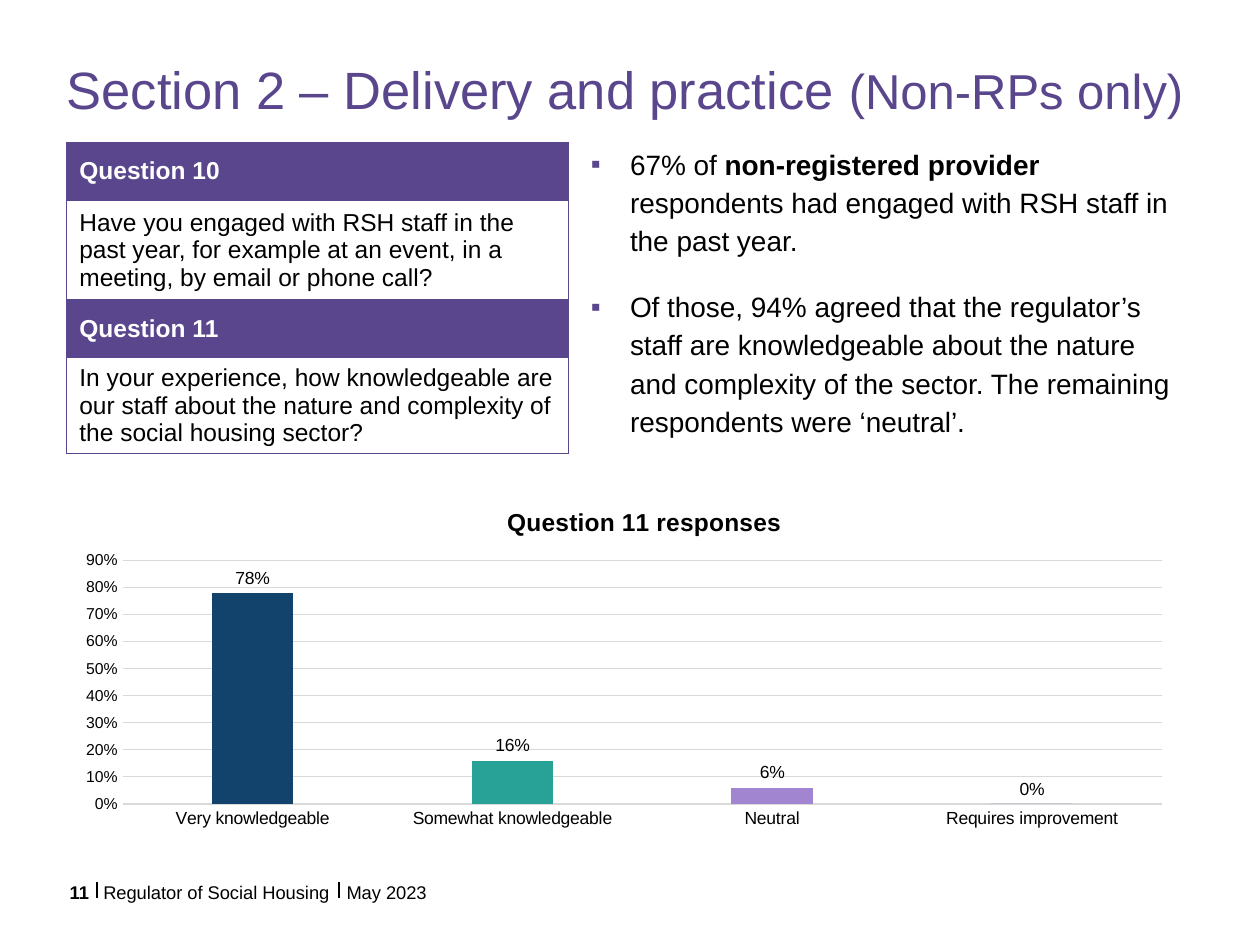
from lxml.etree import SubElement
from pptx import Presentation
from pptx.chart.data import CategoryChartData
from pptx.dml.color import RGBColor
from pptx.enum.chart import XL_CHART_TYPE, XL_LABEL_POSITION, XL_TICK_MARK
from pptx.enum.shapes import MSO_CONNECTOR
from pptx.enum.text import MSO_ANCHOR, MSO_AUTO_SIZE, PP_ALIGN
from pptx.oxml import parse_xml
from pptx.oxml.ns import nsdecls, qn
from pptx.util import Inches, Pt

COLORS = {
    "purple": "59468D", "black": "000000", "white": "FFFFFF", "grid": "D9D9D9",
    "navy": "12436D", "teal": "28A197", "lilac": "A285D1",
}
COLS, ROWS = 100, 75
LEFT, WIDTH, TOP = 5.3, 88.7, 11.3


def rgb(name):
    return RGBColor.from_string(COLORS[name])


class Deck:
    font = "Arial"

    def __init__(self):
        self.prs = Presentation()
        self.prs.slide_width, self.prs.slide_height = Inches(10), Inches(7.5)
        self.s = self.prs.slides.add_slide(self.prs.slide_layouts[1])

    def x(self, col):
        return round(self.prs.slide_width * col / COLS)

    def y(self, row):
        return round(self.prs.slide_height * row / ROWS)

    def box(self, col, row, cols, rows):
        return self.x(col), self.y(row), self.x(cols), self.y(rows)

    def style(self, font, size, color="black", bold=False):
        font.name, font.size, font.bold = self.font, Pt(size), bold
        font.color.rgb = rgb(color)

    def run(self, p, text, size, color="black", bold=False):
        r = p.add_run()
        r.text = text
        self.style(r.font, size, color, bold)

    def frame(self, sp):
        tf = sp.text_frame
        tf.margin_left = tf.margin_right = tf.margin_top = tf.margin_bottom = 0
        tf.word_wrap, tf.auto_size = True, MSO_AUTO_SIZE.NONE
        tf.vertical_anchor = MSO_ANCHOR.TOP
        return tf

    def placeholder(self, sp, *place):
        sp.left, sp.top, sp.width, sp.height = self.box(*place)
        return self.frame(sp)

    def title(self, parts, *place):
        p = self.placeholder(self.s.shapes.title, *place).paragraphs[0]
        p.alignment, p.line_spacing = PP_ALIGN.LEFT, 0.9
        for text, size in parts:
            self.run(p, text, size, "purple")

    def bullets(self, items, *place):
        tf = self.placeholder(self.s.placeholders[1], *place)
        for i, parts in enumerate(items):
            p = tf.add_paragraph() if i else tf.paragraphs[0]
            p.line_spacing, p.space_before, p.space_after = 1.14, Pt(0), Pt(16)
            pPr = p._p.get_or_add_pPr()
            pPr.set("marL", str(self.x(3.1)))
            pPr.set("indent", str(-self.x(3.1)))
            color = SubElement(pPr, qn("a:buClr"))
            SubElement(color, qn("a:srgbClr"), val=COLORS["purple"])
            SubElement(pPr, qn("a:buFont"), typeface=self.font)
            SubElement(pPr, qn("a:buChar"), char="▪")
            for text, bold in parts:
                self.run(p, text, 16, bold=bold)

    def text(self, text, *place, bold=False, align=PP_ALIGN.LEFT):
        p = self.frame(self.s.shapes.add_textbox(*self.box(*place))).paragraphs[0]
        p.alignment = align
        self.run(p, text, 10.5, bold=bold)

    def divider(self, col, top, bottom):
        line = self.s.shapes.add_connector(
            MSO_CONNECTOR.STRAIGHT, self.x(col), self.y(bottom), self.x(col), self.y(top))
        line.line.color.rgb, line.line.width = rgb("black"), Pt(0.75)
        SubElement(line._element.spPr, qn("a:effectLst"))

    def border(self, cell, sides):
        tcPr = cell._tc.get_or_add_tcPr()
        for i, side in enumerate(sides):
            tcPr.insert(i, parse_xml(
                f'<a:ln{side} {nsdecls("a")} w="{Pt(0.5)}"><a:solidFill>'
                f'<a:srgbClr val="{COLORS["purple"]}"/></a:solidFill></a:ln{side}>'))

    def table(self, questions, heights, *place):
        texts = [text for pair in questions for text in pair]
        table = self.s.shapes.add_table(len(texts), 1, *self.box(*place)).table
        table.first_row = table.horz_banding = False
        for i, (text, height) in enumerate(zip(texts, heights)):
            heading = i % 2 == 0
            table.rows[i].height = self.y(height)
            cell = table.cell(i, 0)
            cell.vertical_anchor = MSO_ANCHOR.MIDDLE
            cell.fill.solid()
            cell.fill.fore_color.rgb = rgb("purple" if heading else "white")
            self.border(cell, "LRTB")
            self.run(cell.text_frame.paragraphs[0], text, 14,
                     "white" if heading else "black", heading)

    def layout(self, parent, **shares):
        layout = parent.find(qn("c:layout"))
        if layout is None:
            layout = parse_xml(f'<c:layout {nsdecls("c")}/>')
            parent.insert(0, layout)
        manual = SubElement(layout, qn("c:manualLayout"))
        if "w" in shares:
            SubElement(manual, qn("c:layoutTarget"), val="inner")
        for key in "xy":
            SubElement(manual, qn(f"c:{key}Mode"), val="edge")
        for key, share in shares.items():
            SubElement(manual, qn(f"c:{key}"), val=str(share))

    def chart(self, title, values, fills, *place):
        data = CategoryChartData(number_format="0%")
        data.categories = list(values)
        data.add_series("Series 1", list(values.values()))
        chart = self.s.shapes.add_chart(
            XL_CHART_TYPE.COLUMN_CLUSTERED, *self.box(*place), data).chart
        self.style(chart.font, 10)
        chart.has_legend = False
        chart.has_title = True
        self.run(chart.chart_title.text_frame.paragraphs[0], title, 14, bold=True)
        self.layout(chart.chart_title._element, x=0.39, y=0.04)
        self.layout(chart._chartSpace.chart.plotArea, x=0.05, y=0.21, w=0.93, h=0.7)

        cat, val = chart.category_axis, chart.value_axis
        for axis, size in ((cat, 10), (val, 9)):
            axis.major_tick_mark = axis.minor_tick_mark = XL_TICK_MARK.NONE
            self.style(axis.tick_labels.font, size)
        val.minimum_scale, val.maximum_scale, val.major_unit = 0, 0.9, 0.1
        val.tick_labels.number_format = "0%"
        val.tick_labels.number_format_is_linked = False
        val.format.line.fill.background()
        for line in (cat.format.line, val.major_gridlines.format.line):
            line.color.rgb, line.width = rgb("grid"), Pt(0.75)

        plot = chart.plots[0]
        plot.gap_width, plot.overlap, plot.vary_by_categories = 219, -27, False
        series = plot.series[0]
        series.format.fill.solid()
        series.format.fill.fore_color.rgb = rgb("purple")
        for i, color in enumerate(fills):
            fill = series.points[i].format.fill
            fill.solid()
            fill.fore_color.rgb = rgb(color)
        labels = series.data_labels
        labels.show_value, labels.position = True, XL_LABEL_POSITION.OUTSIDE_END
        labels.number_format, labels.number_format_is_linked = "0%", False
        self.style(labels.font, 10)


def main():
    deck = Deck()
    deck.title([("Section 2 – Delivery and practice ", 30), ("(Non-RPs only)", 28)],
               LEFT, 5.1, WIDTH, 7.9)
    deck.bullets([
        [("67% of ", False), ("non-registered provider ", True),
         ("respondents had engaged with RSH staff in the past year.", False)],
        [("Of those, 94% agreed that the regulator’s staff are knowledgeable about the nature "
          "and complexity of the sector. The remaining respondents were ‘neutral’.", False)],
    ], 46.9, TOP, 47.1, 24.2)
    deck.table([
        ("Question 10", "Have you engaged with RSH staff in the past year, for example at an "
                        "event, in a meeting, by email or phone call?"),
        ("Question 11", "In your experience, how knowledgeable are our staff about the nature "
                        "and complexity of the social housing sector?"),
    ], (4.6, 7.9, 4.6, 7.6), LEFT, TOP, 39.8, 24.7)
    deck.chart("Question 11 responses",
               {"Very knowledgeable": 0.78, "Somewhat knowledgeable": 0.16,
                "Neutral": 0.06, "Requires improvement": 0},
               ("navy", "teal", "lilac"), LEFT, 38.7, WIDTH, 27.6)
    deck.text("11", LEFT, 69.9, 2, 1.2, bold=True, align=PP_ALIGN.CENTER)
    deck.text("Regulator of Social Housing", 8.2, 69.9, 18.3, 1.2)
    deck.text("May 2023", 27.5, 69.9, 23.5, 1.2)
    for col in (7.7, 26.9):
        deck.divider(col, 70, 71.3)
    deck.prs.save("out.pptx")


if __name__ == "__main__":
    main()
